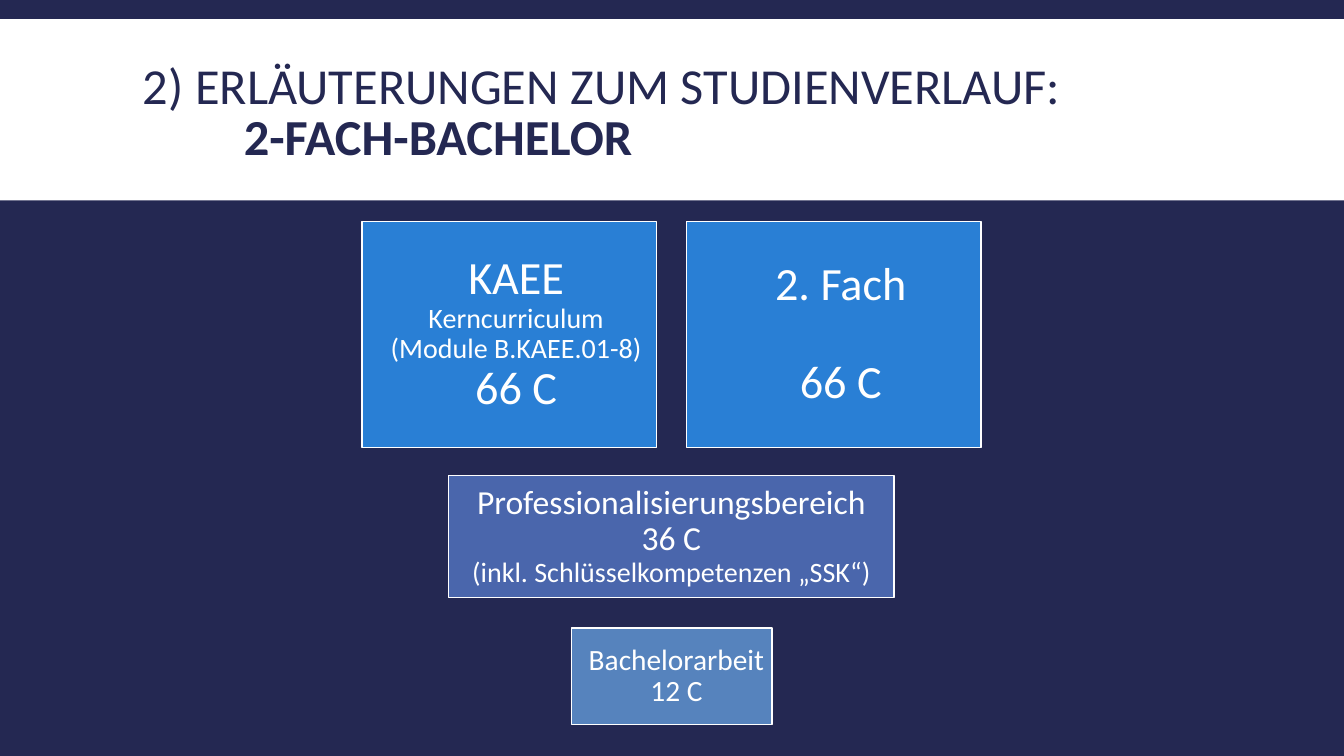
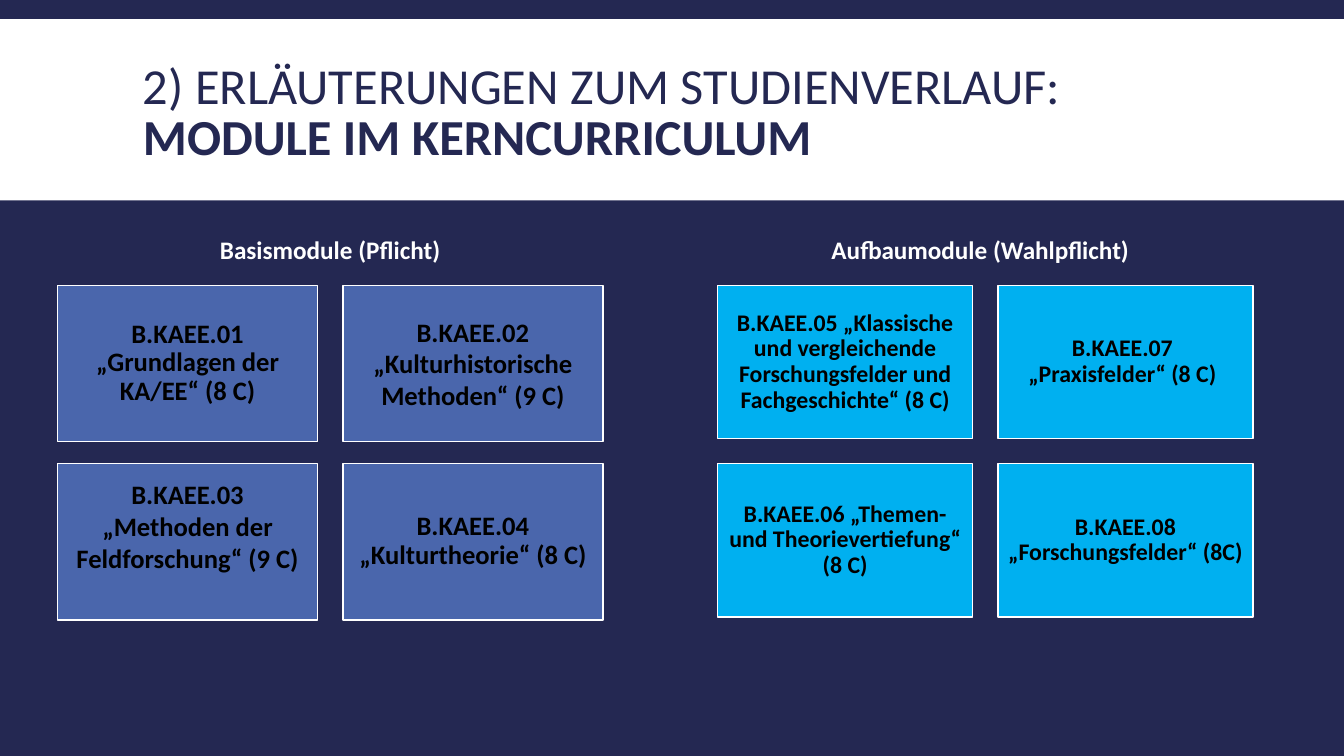
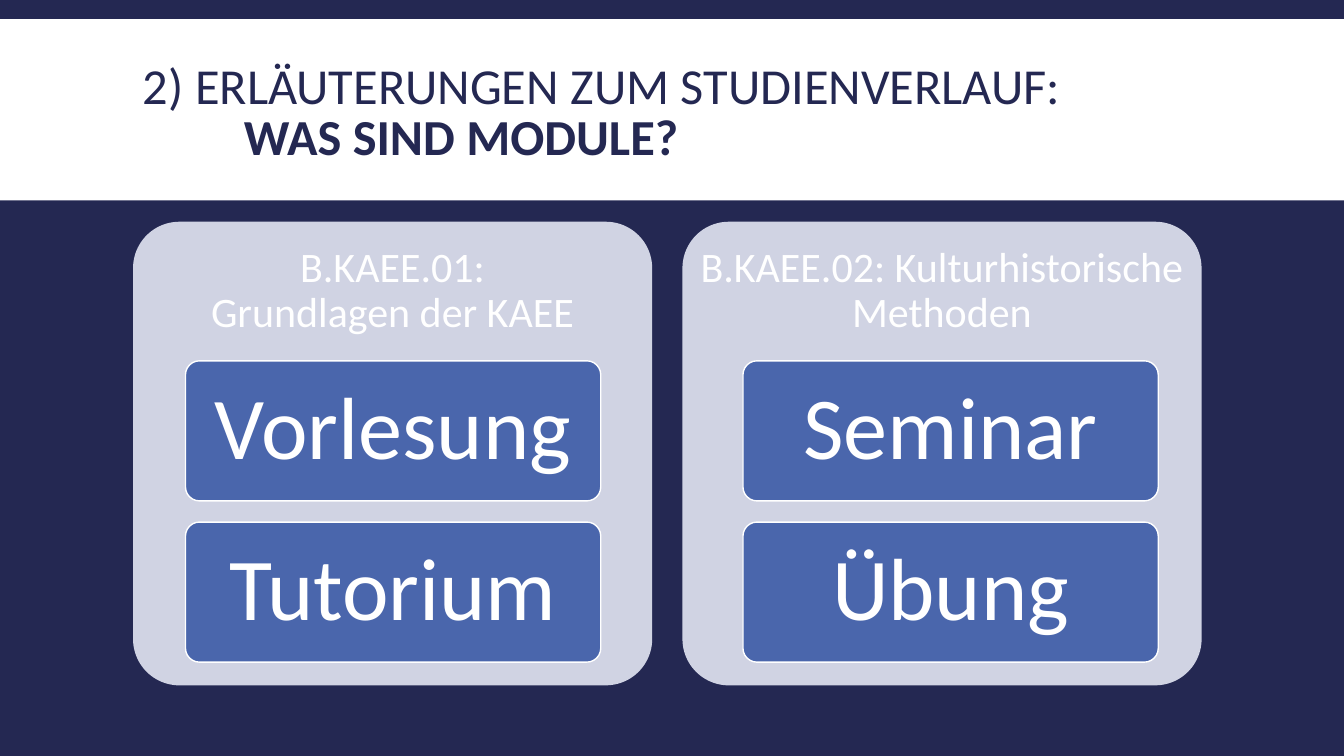
from pptx import Presentation
from pptx.dml.color import RGBColor
from pptx.enum.shapes import MSO_SHAPE
from pptx.enum.text import MSO_ANCHOR, PP_ALIGN
from pptx.util import Inches, Pt

INK = {
    "navy": "242852", "white": "FFFFFF", "black": "000000",
    "blue": "297FD5", "indigo": "4A66AC", "steel": "5683BD",
    "cyan": "00B0F0", "pale": "D0D3E3",
}
FONT = "Calibri"
RECT, ROUND = MSO_SHAPE.RECTANGLE, MSO_SHAPE.ROUNDED_RECTANGLE

deck = Presentation()
deck.slide_width, deck.slide_height = Inches(13.333), Inches(7.5)
COL, ROW = deck.slide_width / 100, deck.slide_height / 100  # 100 x 100 grid


def block(page, at, fill=None, form=RECT, edge=True):
    """Place a shape, or a text box if there is no fill, on the grid."""
    left, top, wide, high = at
    place = [int(n) for n in (left * COL, top * ROW, wide * COL, high * ROW)]
    if not fill:
        return page.shapes.add_textbox(*place)
    item = page.shapes.add_shape(form, *place)
    item.shadow.inherit = False
    item.fill.solid()
    item.fill.fore_color.rgb = RGBColor.from_string(INK[fill])
    if form == ROUND:
        item.adjustments[0] = 0.1
    if edge:
        item.line.color.rgb = RGBColor.from_string(INK["white"])
        item.line.width = Pt(1)
    else:
        item.line.fill.background()
    return item


def write(item, lines, ink="white", pad=(0.1, 0.05, 0.1, 0.05),
          lead=0.9, align=PP_ALIGN.CENTER):
    """Fill an item with lines of (text, size, bold), one paragraph each."""
    frame = item.text_frame
    frame.word_wrap = True
    frame.vertical_anchor = MSO_ANCHOR.MIDDLE
    (frame.margin_left, frame.margin_top,
     frame.margin_right, frame.margin_bottom) = [Inches(n) for n in pad]
    for n, (text, size, bold) in enumerate(lines):
        para = frame.add_paragraph() if n else frame.paragraphs[0]
        para.alignment = align
        para.line_spacing = lead
        run = para.add_run()
        run.text = text
        run.font.name, run.font.size, run.font.bold = FONT, Pt(size), bold
        run.font.color.rgb = RGBColor.from_string(INK[ink])
    return frame.paragraphs


# Shared background, white band and title
back = deck.slide_master.background.fill
back.solid()
back.fore_color.rgb = RGBColor.from_string(INK["navy"])

pages = []
for topic, dent in [("2-FACH-BACHELOR", 1), ("MODULE IM KERNCURRICULUM", 0),
                    ("WAS SIND MODULE?", 1)]:
    page = deck.slides.add_slide(deck.slide_layouts[6])
    block(page, (0, 2.53, 100, 24), "white", edge=False)
    head = write(block(page, (9.9, 4.13, 80.25, 22)),
                 [("2) ERLÄUTERUNGEN ZUM STUDIENVERLAUF:", 36, False),
                  (topic, 36, True)],
                 "navy", lead=0.85, align=PP_ALIGN.LEFT)
    head[1]._p.get_or_add_pPr().set("marL", str(Inches(dent)))
    pages.append(page)
plan, core, parts = pages

# Slide 1: credits of the degree
SIDE = (0.19, 0.1, 0.05, 0.1)
tiles = [
    ((26.93, 29.33, 21.9, 29.87), "blue", SIDE,
     [("KAEE", 33), ("Kerncurriculum", 20),
      ("(Module B.KAEE.01-8)", 20), ("66 C", 33)]),
    ((51.08, 29.33, 21.9, 29.87), "blue", SIDE,
     [("2. Fach", 33), ("66 C", 33)]),
    ((33.38, 62.93, 33.15, 16.13), "indigo", (0.1, 0.1, 0.1, 0.1),
     [("Professionalisierungsbereich", 24), ("36 C", 24),
      ("(inkl. Schlüsselkompetenzen „SSK“)", 20)]),
    ((42.53, 83.07, 14.93, 12.8), "steel", (0.14, 0.1, 0.05, 0.1),
     [("Bachelorarbeit", 21), ("12 C", 21)]),
]
for at, fill, pad, lines in tiles:
    rows = write(block(plan, at, fill),
                 [(text, size, False) for text, size in lines], pad=pad)
    if lines[0][0] == "2. Fach":
        rows[1].space_before = Pt(34)

# Slide 2: two groups of four modules, as (text, line spacing, padding)
BASE, TOP = (0.08,) * 4, (0.07,) * 4
groups = [
    ("Basismodule (Pflicht)", 7.43, "indigo", 19,
     (4.28, 21.23, 19.35, 20.67),
     [("B.KAEE.01 „Grundlagen der KA/EE“ (8 C)", 0.9, BASE),
      ("B.KAEE.02 „Kulturhistorische Methoden“ (9 C)", 1, BASE),
      ("B.KAEE.03 „Methoden der Feldforschung“ (9 C)", 1,
       (0.13, 0.08, 0.13, 0.4)),
      ("B.KAEE.04 „Kulturtheorie“ (8 C)", 0.9, BASE)]),
    ("Aufbaumodule (Wahlpflicht)", 55.8, "cyan", 17,
     (53.4, 20.85, 18.98, 20.27),
     [("B.KAEE.05 „Klassische und vergleichende Forschungsfelder und "
       "Fachgeschichte“ (8 C)", 0.9, TOP),
      ("B.KAEE.07 „Praxisfelder“ (8 C)", 0.9, (0.07, 0.07, 0.13, 0.07)),
      ("B.KAEE.06 „Themen- und Theorievertiefung“ (8 C)", 0.9, TOP),
      ("B.KAEE.08 „Forschungsfelder“ (8C)", 0.9, TOP)]),
]
for label, edge, fill, size, (left, step, wide, high), cells in groups:
    write(block(core, (edge, 30.27, 34.28, 5.33)), [(label, 18, True)], lead=1)
    for n, (text, lead, pad) in enumerate(cells):
        row, col = divmod(n, 2)
        at = (left + col * step, 37.73 + row * 23.6, wide, high)
        write(block(core, at, fill), [(text, size, True)], "black", pad, lead)

# Slide 3: two panels with their courses
panels = [
    (9.9, 13.8, ["B.KAEE.01:", "Grundlagen der KAEE"],
     ["Vorlesung", "Tutorium"]),
    (50.78, 55.28, ["B.KAEE.02: Kulturhistorische Methoden"],
     ["Seminar", "Übung"]),
]
for left, inner, name, kinds in panels:
    block(parts, (left, 29.33, 38.63, 61.33), "pale", ROUND, edge=False)
    write(block(parts, (left, 29.33, 38.63, 18.4)),
          [(text, 30, False) for text in name], pad=(0.12,) * 4)
    for n, kind in enumerate(kinds):
        at = (inner, 47.73 + n * 21.33, 30.9, 18.53)
        write(block(parts, at, "indigo", ROUND), [(kind, 63, False)],
              pad=(0.17, 0.13, 0.17, 0.13))

deck.save("out.pptx")
